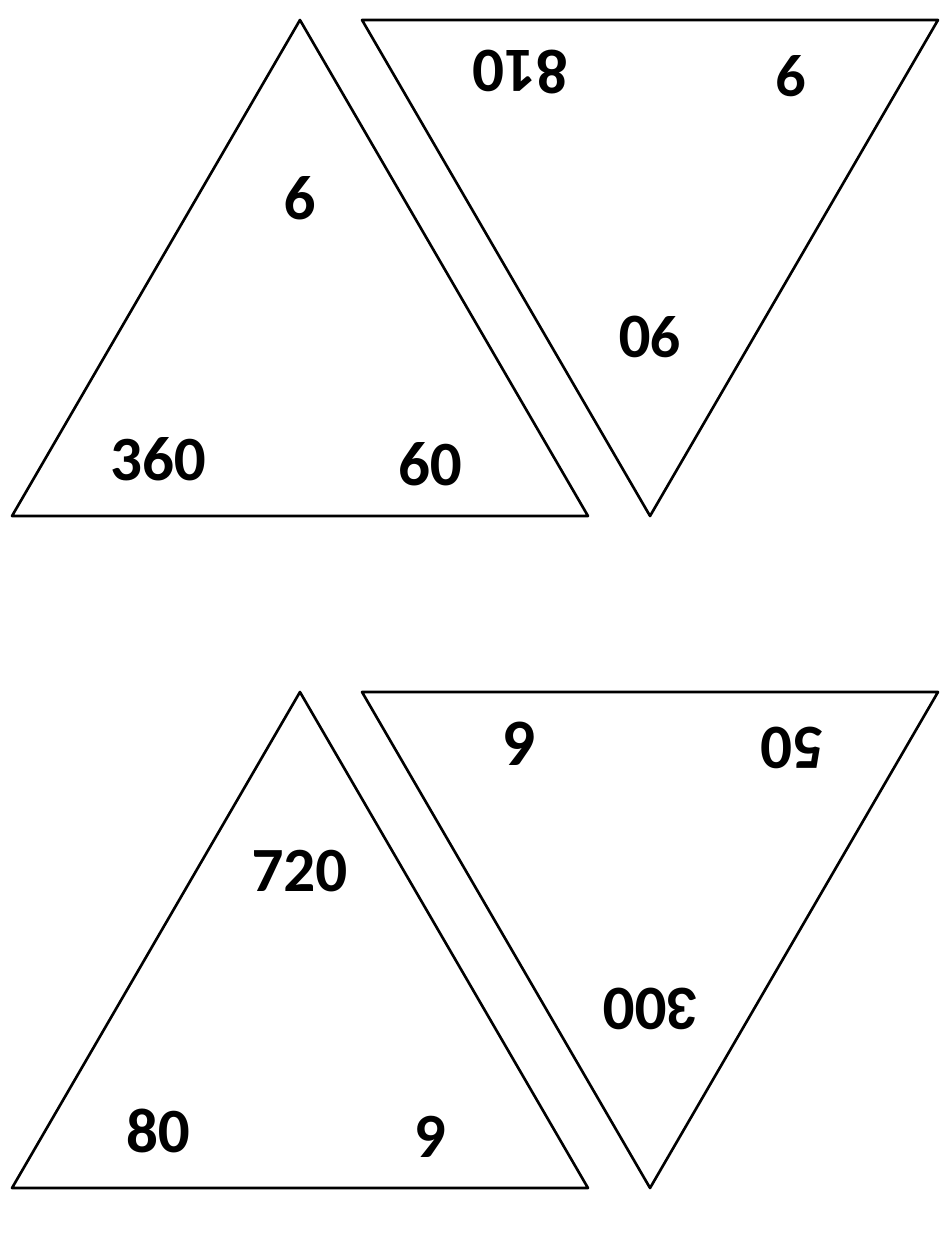
from pptx import Presentation
from pptx import util as u
from pptx.dml.color import RGBColor
from pptx.enum import shapes, text

PX = u.Inches(1) / 126
BLACK = RGBColor(0x00, 0x00, 0x00)
WHITE = RGBColor(0xFF, 0xFF, 0xFF)

FACT_ROWS = [
    [("6", "360", "60"), ("90", "9", "810")],
    [("720", "80", "9"), ("300", "50", "6")],
]
CARD_LEFT, CARD_TOP = 12, 20
COLUMN_STEP, ROW_STEP = 350, 672
CARD_WIDTH, CARD_HEIGHT = 576, 496
CORNERS = [(208, 130, 159), (62, 391, 168), (324, 396, 188)]
NUMBER_HEIGHT = 89


def px(*lengths):
    return [u.Emu(round(length * PX)) for length in lengths]


def add_card(slide, left, top, numbers, rotation):
    card = slide.shapes.add_group_shape()
    triangle = card.shapes.add_shape(
        shapes.MSO_SHAPE.ISOSCELES_TRIANGLE, *px(left, top, CARD_WIDTH, CARD_HEIGHT))
    triangle.shadow.inherit = False
    triangle.fill.solid()
    triangle.fill.fore_color.rgb = WHITE
    triangle.line.color.rgb = BLACK
    triangle.line.width = u.Pt(1.5)
    for number, (dx, dy, width) in zip(numbers, CORNERS):
        corner = card.shapes.add_textbox(*px(left + dx, top + dy, width, NUMBER_HEIGHT))
        frame = corner.text_frame
        frame.word_wrap = True
        frame.auto_size = text.MSO_AUTO_SIZE.SHAPE_TO_FIT_TEXT
        frame.text = number
        paragraph = frame.paragraphs[0]
        paragraph.alignment = text.PP_ALIGN.CENTER
        font = paragraph.runs[0].font
        font.name = "Calibri"
        font.size = u.Pt(36)
        font.bold = True
        font.color.rgb = BLACK
    card.rotation = rotation


def main():
    deck = Presentation()
    deck.slide_width, deck.slide_height = px(945, 1260)
    slide = deck.slides.add_slide(deck.slide_layouts[6])
    for row, facts in enumerate(FACT_ROWS):
        for column, numbers in enumerate(facts):
            add_card(slide, CARD_LEFT + column * COLUMN_STEP,
                     CARD_TOP + row * ROW_STEP, numbers, 180 * column)
    deck.save("out.pptx")


if __name__ == "__main__":
    main()
